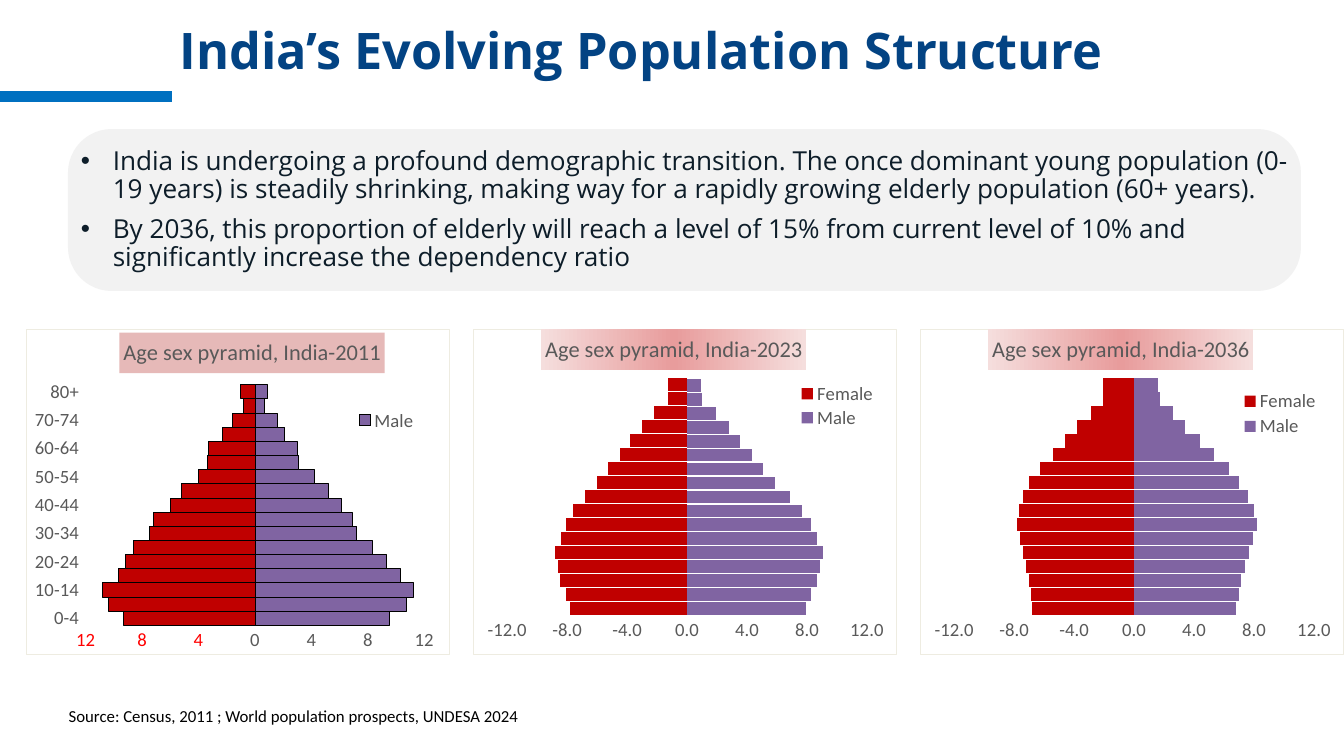
from copy import deepcopy

from lxml import etree
from pptx import Presentation
from pptx.chart.data import CategoryChartData
from pptx.dml.color import RGBColor
from pptx.enum.chart import (XL_CHART_TYPE, XL_LEGEND_POSITION,
                             XL_TICK_LABEL_POSITION, XL_TICK_MARK)
from pptx.enum.shapes import MSO_SHAPE
from pptx.enum.text import MSO_ANCHOR, PP_ALIGN
from pptx.oxml import parse_xml
from pptx.oxml.ns import qn
from pptx.util import Pt

BAR = XL_CHART_TYPE.BAR_CLUSTERED
BOTTOM, RIGHT = XL_LEGEND_POSITION.BOTTOM, XL_LEGEND_POSITION.RIGHT
LOW, NO_TICK = XL_TICK_LABEL_POSITION.LOW, XL_TICK_MARK.NONE
MIDDLE, CENTER, LEFT = MSO_ANCHOR.MIDDLE, PP_ALIGN.CENTER, PP_ALIGN.LEFT
NS = ('xmlns:a="http://schemas.openxmlformats.org/drawingml/2006/main" '
      'xmlns:c="http://schemas.openxmlformats.org/drawingml/2006/chart"')

COLORS = {"title": "034383", "accent": "0070C0", "panel": "F2F2F2",
          "body": "0D1D29", "black": "000000", "label": "595959",
          "axis": "D9D9D9", "border": "EEECE1", "Male": "8064A2",
          "Female": "C00000", "band": "E6B9B8", "edge": "F5DEDD",
          "core": "E89C9C"}

TITLE = "India’s Evolving Population Structure"
POINTS = [
    "India is undergoing a profound demographic transition. The once dominant "
    "young population (0-19 years) is steadily shrinking, making way for a "
    "rapidly growing elderly population (60+ years).",
    "By 2036, this proportion of elderly will reach a level of 15% from current "
    "level of 10% and significantly increase the dependency ratio",
]
SOURCE = "Source: Census, 2011 ; World population prospects, UNDESA 2024"

AGES = [f"{low}-{low + 4}" for low in range(0, 80, 5)] + ["80+"]
RANKS = [str(n) for n in range(1, 18)]
# Layouts are fractions of the chart: x, y, width, height.
PYRAMIDS = [
    {"year": 2011, "cats": AGES, "gap": 0, "overlap": 100, "ages": True,
     "format": "0;[Red]0", "title": (0.22, 0.01),
     "plot": (0.14, 0.17, 0.8, 0.74), "legend": (0.75, 0.24, 0.2, 0.08),
     "Male": [9.5, 10.7, 11.2, 10.3, 9.3, 8.3, 7.2, 6.9, 6.1, 5.2, 4.2, 3.1,
              3, 2.1, 1.6, 0.7, 0.9],
     "Female": [-9.3, -10.4, -10.8, -9.7, -9.2, -8.6, -7.5, -7.2, -6, -5.2,
                -4, -3.4, -3.3, -2.3, -1.6, -0.8, -1]},
    {"year": 2023, "cats": RANKS, "gap": 6, "overlap": 97, "ages": False,
     "format": "0.0", "title": (0.16, 0),
     "plot": (0.08, 0.15, 0.85, 0.73), "legend": (0.76, 0.16, 0.2, 0.15),
     "Male": [7.9, 8.3, 8.7, 8.9, 9.1, 8.7, 8.3, 7.7, 6.9, 5.9, 5.1, 4.3,
              3.5, 2.8, 1.9, 1, 0.9],
     "Female": [-7.8, -8.1, -8.5, -8.6, -8.8, -8.4, -8.1, -7.6, -6.8, -6,
                -5.3, -4.5, -3.8, -3, -2.2, -1.3, -1.3]},
    {"year": 2036, "cats": RANKS, "gap": 6, "overlap": 100, "ages": False,
     "format": "0.0", "title": (0.16, 0),
     "plot": (0.08, 0.15, 0.85, 0.73), "legend": (0.75, 0.18, 0.2, 0.16),
     "Male": [6.8, 7, 7.1, 7.4, 7.7, 7.9, 8.2, 8, 7.6, 7, 6.3, 5.3, 4.4, 3.4,
              2.6, 1.7, 1.6],
     "Female": [-6.8, -6.9, -7, -7.2, -7.4, -7.6, -7.8, -7.7, -7.4, -7, -6.3,
                -5.4, -4.6, -3.8, -2.9, -2.1, -2.1]},
]
CHART_X, CHART_Y, CHART_W, CHART_H, PITCH = 26, 329, 424, 326, 447


def px(n):
    return round(n * 914400 / 67.2)


def box(*lengths):
    return [px(n) for n in lengths]


def rgb(name):
    return RGBColor.from_string(COLORS[name])


def style(font, size, color, face="Calibri", bold=False):
    font.size, font.name, font.bold = Pt(size), face, bold
    font.color.rgb = rgb(color)


def add_text(slide, area, text, *look):
    frame = slide.shapes.add_textbox(*box(*area)).text_frame
    frame.word_wrap = True
    frame.text = text
    style(frame.paragraphs[0].runs[0].font, *look)
    return frame


def add_panel(slide, kind, area, color):
    shape = slide.shapes.add_shape(kind, *box(*area))
    shape.shadow.inherit = False
    shape.fill.solid()
    shape.fill.fore_color.rgb = rgb(color)
    shape.line.fill.background()
    return shape


def add_points(shape):
    frame = shape.text_frame
    frame.margin_left = frame.margin_right = 0
    frame.margin_top = frame.margin_bottom = 0
    frame.vertical_anchor = MIDDLE
    frame.text = "\n".join(POINTS)
    for para in frame.paragraphs:
        para.alignment, para.line_spacing, para.space_before = LEFT, 0.9, Pt(12)
        style(para.runs[0].font, 28, "body", "Open Sans")
        props = para._p.get_or_add_pPr()
        props.set("marL", str(px(32)))
        props.set("indent", str(px(-32)))
        etree.SubElement(props, qn("a:buFont")).set("typeface", "Arial")
        etree.SubElement(props, qn("a:buChar")).set("char", "•")


def place(part, index, spot, inner=False):
    """Give a chart part a manual layout, as child number index."""
    for old in part.findall(qn("c:layout")):
        part.remove(old)
    layout = etree.Element(qn("c:layout"))
    manual = etree.SubElement(layout, qn("c:manualLayout"))
    pairs = [("layoutTarget", "inner")] if inner else []
    pairs += [("xMode", "edge"), ("yMode", "edge"), *zip("xywh", spot)]
    for tag, val in pairs:
        etree.SubElement(manual, qn(f"c:{tag}")).set("val", str(val))
    part.insert(index, layout)


def fill_title(title, ramp):
    fill = title.format.fill
    if not ramp:
        fill.solid()
        fill.fore_color.rgb = rgb("band")
        return
    fill.gradient()
    fill.gradient_angle = 0
    for stop, name, pos in zip(fill.gradient_stops, ("edge", "core"), (0, 0.5)):
        stop.color.rgb, stop.position = rgb(name), pos
    stops = title._element.find(".//" + qn("a:gsLst"))
    last = deepcopy(stops[0])
    last.set("pos", "100000")
    stops.append(last)


def add_pyramid(slide, left, info):
    data = CategoryChartData()
    data.categories = info["cats"]
    for name in ("Male", "Female"):
        data.add_series(name, info[name])
    area = box(left, CHART_Y, CHART_W, CHART_H)
    chart = slide.shapes.add_chart(BAR, *area, data).chart
    style(chart.font, 20, "black")
    border = parse_xml(
        f'<c:spPr {NS}><a:noFill/><a:ln w="9525"><a:solidFill><a:srgbClr '
        f'val="{COLORS["border"]}"/></a:solidFill></a:ln></c:spPr>')
    chart._chartSpace.find(qn("c:txPr")).addprevious(border)

    title = chart.chart_title
    title.text_frame.text = f"Age sex pyramid, India-{info['year']}"
    style(title.text_frame.paragraphs[0].runs[0].font, 24, "label")
    fill_title(title, not info["ages"])
    place(title._element, 1, info["title"])

    plot = chart.plots[0]
    plot.gap_width, plot.overlap = info["gap"], info["overlap"]
    plot.vary_by_categories = False
    for series in plot.series:
        series.invert_if_negative = False
        series.format.fill.solid()
        series.format.fill.fore_color.rgb = rgb(series.name)
        if info["ages"]:
            series.format.line.color.rgb = rgb("black")
            series.format.line.width = Pt(0.75)
    place(chart._chartSpace.chart.plotArea, 0, info["plot"], inner=True)

    ages, share = chart.category_axis, chart.value_axis
    for axis in (ages, share):
        axis.has_major_gridlines = False
        axis.major_tick_mark = axis.minor_tick_mark = NO_TICK
        style(axis.tick_labels.font, 20, "label")
    ages.visible = info["ages"]
    ages.tick_label_position = LOW
    ages.format.line.color.rgb = rgb("axis")
    ages.format.line.width = Pt(0.75)
    share.minimum_scale, share.maximum_scale, share.major_unit = -12, 12, 4
    share.tick_labels.number_format = info["format"]
    share.tick_labels.number_format_is_linked = False
    share.format.line.fill.background()

    chart.has_legend = True
    legend = chart.legend
    legend.position = BOTTOM if info["ages"] else RIGHT
    legend.include_in_layout = False
    style(legend.font, 20, "label")
    place(legend._element, 1, info["legend"])
    if info["ages"]:  # this legend names Female only
        legend._element.insert(1, parse_xml(
            f'<c:legendEntry {NS}><c:idx val="0"/><c:delete val="1"/>'
            '</c:legendEntry>'))


def main():
    deck = Presentation()
    deck.slide_width, deck.slide_height = box(1344, 756)
    slide = deck.slides.add_slide(deck.slide_layouts[6])
    head = add_text(slide, (62, 16, 1159, 66), TITLE, 54, "title", "Open Sans", True)
    head.vertical_anchor = MIDDLE
    head.paragraphs[0].alignment = CENTER
    add_panel(slide, MSO_SHAPE.MATH_MINUS, (-34, 75, 238, 43), "accent")
    panel = add_panel(slide, MSO_SHAPE.ROUNDED_RECTANGLE, (68, 129, 1233, 162), "panel")
    panel.adjustments[0] = 0.27
    add_points(panel)
    for i, info in enumerate(PYRAMIDS):
        add_pyramid(slide, CHART_X + i * PITCH, info)
    add_text(slide, (62, 702, 470, 27), SOURCE, 18, "black")
    deck.save("out.pptx")


if __name__ == "__main__":
    main()
